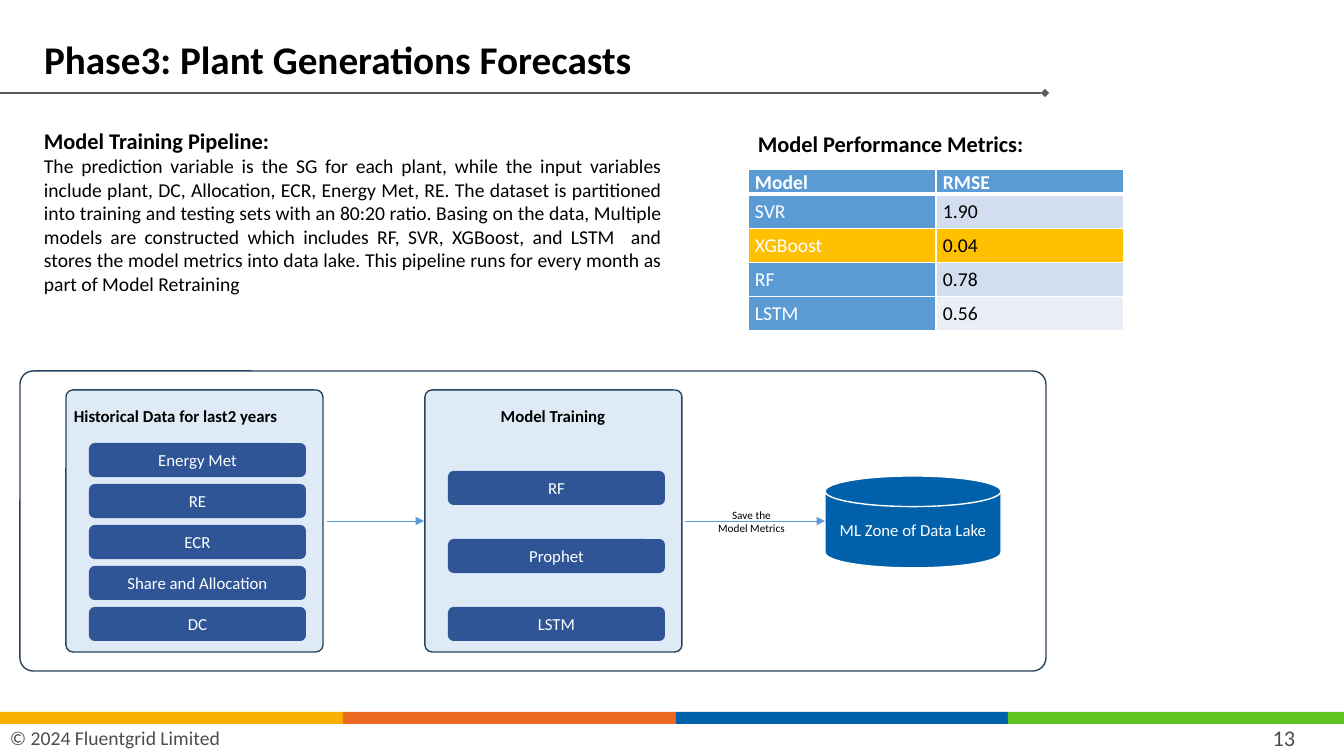
from lxml import etree
from pptx import Presentation
from pptx.dml.color import RGBColor
from pptx.enum.shapes import MSO_CONNECTOR, MSO_SHAPE
from pptx.enum.text import MSO_ANCHOR, MSO_AUTO_SIZE, PP_ALIGN
from pptx.oxml.ns import qn
from pptx.util import Pt

LEFT, CENTER, JUSTIFY = PP_ALIGN.LEFT, PP_ALIGN.CENTER, PP_ALIGN.JUSTIFY
TOP, MIDDLE = MSO_ANCHOR.TOP, MSO_ANCHOR.MIDDLE
RECTANGLE, ROUNDED = MSO_SHAPE.RECTANGLE, MSO_SHAPE.ROUNDED_RECTANGLE
DISK = MSO_SHAPE.FLOWCHART_MAGNETIC_DISK
STRAIGHT = MSO_CONNECTOR.STRAIGHT
NO_AUTOFIT = MSO_AUTO_SIZE.NONE

FONT = "Calibri"
EMU_PER_PX = 914400 / 100.8
COLORS = {
    "black": "000000", "white": "FFFFFF", "footer": "4D4D4D", "rule": "5A5A5A",
    "amber": "F9B101", "orange": "EC691F", "blue": "0060AA", "green": "60C421",
    "outline": "28445D", "panel": "DEEBF7", "bar": "2F5597", "accent": "5B9BD5",
    "best": "FFC000", "band_dark": "D2DEEF", "band_light": "EAEFF7",
}
PIPELINE_TEXT = (
    "The prediction variable is the SG for each plant, while the input variables include "
    "plant, DC, Allocation, ECR, Energy Met, RE. The dataset is partitioned into training "
    "and testing sets with an 80:20 ratio. Basing on the data, Multiple models are "
    "constructed which includes RF, SVR, XGBoost, and LSTM  and stores the model metrics "
    "into data lake. This pipeline runs for every month as part of Model Retraining"
)
METRICS = [("SVR", "1.90"), ("XGBoost", "0.04"), ("RF", "0.78"), ("LSTM", "0.56")]
BEST_MODEL = "XGBoost"
FOOTER_BANDS = [("amber", 0, 343), ("orange", 343, 676), ("blue", 676, 1008), ("green", 1008, 1344)]
INPUTS = ["Energy Met", "RE", "ECR", "Share and Allocation", "DC"]
MODELS = ["RF", "Prophet", "LSTM"]


def px(value):
    return round(value * EMU_PER_PX)


def color(name):
    return RGBColor.from_string(COLORS[name])


class SlideBuilder:
    def __init__(self, slide):
        self.slide = slide

    def style(self, paragraph, size, font_color="black", bold=False, align=LEFT):
        paragraph.alignment = align
        for run in paragraph.runs:
            run.font.name = FONT
            run.font.size = Pt(size)
            run.font.bold = bold
            run.font.color.rgb = color(font_color)

    def title(self, text, left, top, width, height):
        shape = self.slide.shapes.title
        shape.left, shape.top, shape.width, shape.height = map(px, (left, top, width, height))
        frame = shape.text_frame
        frame.text = text
        frame.auto_size = NO_AUTOFIT
        frame.vertical_anchor = MIDDLE
        frame.paragraphs[0].line_spacing = 0.9
        self.style(frame.paragraphs[0], 28, bold=True)

    def text(self, text, left, top, width, height, size, font_color="black",
             bold=False, align=LEFT, anchor=TOP, wrap=True):
        box = self.slide.shapes.add_textbox(px(left), px(top), px(width), px(height))
        frame = box.text_frame
        frame.text = text
        frame.word_wrap = wrap
        frame.vertical_anchor = anchor
        for paragraph in frame.paragraphs:
            self.style(paragraph, size, font_color, bold, align)
        return frame

    def shape(self, kind, left, top, width, height, fill, outline=None, radius=None, text=None):
        shape = self.slide.shapes.add_shape(kind, px(left), px(top), px(width), px(height))
        shape.shadow.inherit = False
        shape.fill.solid()
        shape.fill.fore_color.rgb = color(fill)
        if outline:
            shape.line.color.rgb = color(outline)
            shape.line.width = Pt(1)
        else:
            shape.line.fill.background()
        if radius is not None:
            shape.adjustments[0] = radius
        if text:
            shape.text_frame.text = text
            shape.text_frame.word_wrap = True
            shape.text_frame.vertical_anchor = MIDDLE
            self.style(shape.text_frame.paragraphs[0], 12, "white", align=CENTER)

    def line(self, left, right, y, line_color, width, end):
        connector = self.slide.shapes.add_connector(STRAIGHT, px(left), px(y), px(right), px(y))
        connector.line.color.rgb = color(line_color)
        connector.line.width = Pt(width)
        etree.SubElement(connector.line._get_or_add_ln(), qn("a:tailEnd"), type=end)
        etree.SubElement(connector._element.spPr, qn("a:effectLst"))

    def cell(self, cell, text, fill, font_color, bold, bottom_border):
        cell.text = text
        cell.vertical_anchor = MIDDLE
        cell.margin_left = cell.margin_right = px(7)
        cell.margin_top = cell.margin_bottom = 0
        paragraph = cell.text_frame.paragraphs[0]
        paragraph.line_spacing = 1.07
        paragraph.space_after = Pt(8)
        self.style(paragraph, 14, font_color, bold)
        properties = cell._tc.get_or_add_tcPr()
        for side, width in (("L", 1), ("R", 1), ("T", 1), ("B", bottom_border)):
            border = etree.SubElement(properties, qn(f"a:ln{side}"), w=str(Pt(width)))
            border_fill = etree.SubElement(border, qn("a:solidFill"))
            etree.SubElement(border_fill, qn("a:srgbClr"), val=COLORS["white"])
        cell.fill.solid()
        cell.fill.fore_color.rgb = color(fill)

    def metrics_table(self, left, top, width, header_height, row_height):
        height = header_height + row_height * len(METRICS)
        frame = self.slide.shapes.add_table(
            len(METRICS) + 1, 2, px(left), px(top), px(width), px(height))
        table = frame.table
        for column in table.columns:
            column.width = px(width // 2)
        table.rows[0].height = px(header_height)
        for index, heading in enumerate(("Model", "RMSE")):
            self.cell(table.cell(0, index), heading, "accent", "white", True, 3)
        for row, (model, error) in enumerate(METRICS, start=1):
            table.rows[row].height = px(row_height)
            best = model == BEST_MODEL
            band = "band_dark" if row % 2 else "band_light"
            self.cell(table.cell(row, 0), model, "best" if best else "accent", "white", False, 1)
            self.cell(table.cell(row, 1), error, "best" if best else band, "black", False, 1)

    def panel(self, left, heading, align, labels, step):
        self.shape(ROUNDED, left, 390, 257, 262, "panel", "outline", 0.027)
        self.text(heading, left - 2, 401, 260, 35, 12, bold=True, align=align)
        first_top = 607 - step * (len(labels) - 1)
        for index, label in enumerate(labels):
            self.shape(ROUNDED, left + 23, first_top + index * step, 217, 34, "bar", text=label)


def main():
    presentation = Presentation()
    presentation.slide_width = px(1344)
    presentation.slide_height = px(756)
    slide = presentation.slides.add_slide(presentation.slide_layouts[5])
    builder = SlideBuilder(slide)

    builder.text("© 2024 Fluentgrid Limited", 0, 720, 343, 36, 14, "footer", anchor=MIDDLE)
    for band, left, right in FOOTER_BANDS:
        builder.shape(RECTANGLE, left, 712, right - left, 12, band)
    builder.text("13", 1224, 720, 120, 36, 16, "footer", align=CENTER, anchor=MIDDLE)
    builder.line(-1, 1045, 93, "rule", 1.5, "diamond")
    builder.title("Phase3: Plant Generations Forecasts", 34, 31, 958, 62)

    pipeline = builder.text("Model Training Pipeline:\n" + PIPELINE_TEXT,
                            34, 109, 638, 194, 14, align=JUSTIFY)
    heading, body = pipeline.paragraphs
    builder.style(heading, 16, bold=True, align=JUSTIFY)
    heading.line_spacing = 1.5
    body.space_after = Pt(18)

    builder.text("Model Performance Metrics:", 748, 125, 289, 37, 16, bold=True, wrap=False)
    builder.metrics_table(748, 169, 376, 22, 34)

    builder.shape(ROUNDED, 20, 371, 1026, 300, "white", "outline", 0.044)
    builder.panel(66, "Historical Data for last2 years", LEFT, INPUTS, 41)
    builder.panel(425, "Model Training", CENTER, MODELS, 68)
    builder.shape(DISK, 825, 476, 176, 92, "blue", "white", text="ML Zone of Data Lake")
    for left, right in ((327, 424), (685, 825)):
        builder.line(left, right, 521, "accent", 0.5, "triangle")
    builder.text("Save the\nModel Metrics", 700, 503, 103, 43, 8, align=CENTER, wrap=False)

    presentation.save("out.pptx")


if __name__ == "__main__":
    main()
